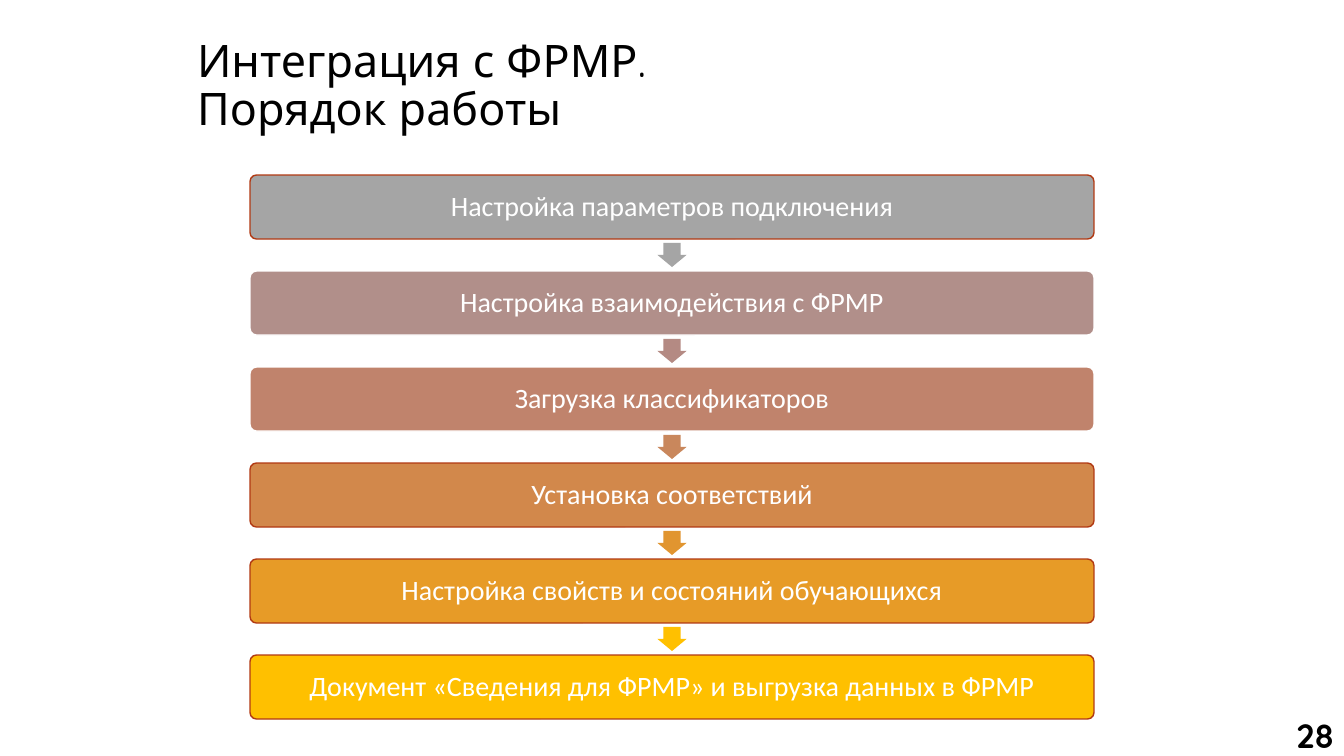
from pptx import Presentation
from pptx.dml.color import RGBColor
from pptx.enum.shapes import MSO_SHAPE as Shape
from pptx.enum.text import MSO_ANCHOR as Anchor, MSO_AUTO_SIZE as AutoSize, PP_ALIGN as Align
from pptx.util import Emu, Pt

EMU_PER_PX = 914400 / 100.8
COLORS = {"black": "000000", "white": "FFFFFF", "rust": "B13913"}
STEPS = [
    ("Настройка параметров подключения", "A5A5A5", "rust"),
    ("Настройка взаимодействия с ФРМР", "B18F8A", "white"),
    ("Загрузка классификаторов", "C0836C", "white"),
    ("Установка соответствий", "D2884B", "rust"),
    ("Настройка свойств и состояний обучающихся", "E79B27", "rust"),
    ("Документ «Сведения для ФРМР» и выгрузка данных в ФРМР", "FFC000", "rust"),
]
ARROW_FILLS = ["A5A5A5", "B48A83", "C9875C", "E19530", "FFC000"]
BOX_LEFT, BOX_TOP, BOX_WIDTH, BOX_HEIGHT, BOX_PITCH = 250, 175, 844, 64, 96
ARROW_LENGTH, ARROW_WIDTH = 24, 29


def px(length):
    return Emu(round(length * EMU_PER_PX))


def color(name):
    return RGBColor.from_string(COLORS.get(name, name))


def write_text(frame, text, size, font="Quicksand", fill="black", bold=False,
               align=Align.LEFT, anchor=Anchor.TOP, spacing=1.0, inset=None):
    frame.word_wrap = True
    frame.vertical_anchor = anchor
    if inset is not None:
        frame.margin_left = frame.margin_right = px(inset)
        frame.margin_top = frame.margin_bottom = px(inset)
    paragraph = frame.paragraphs[0]
    paragraph.text = text
    paragraph.alignment = align
    paragraph.line_spacing = spacing
    for run in paragraph.runs:
        run.font.name = font
        run.font.size = Pt(size)
        run.font.bold = bold
        run.font.color.rgb = color(fill)


class SlideBuilder:
    """Holds the slide and the methods that draw its elements."""

    def __init__(self, presentation):
        self.slide = presentation.slides.add_slide(presentation.slide_layouts[5])

    def title(self, text, left, top, width, height):
        title = self.slide.shapes.title
        title.left, title.top, title.width, title.height = map(px, (left, top, width, height))
        title.text_frame.auto_size = AutoSize.NONE
        write_text(title.text_frame, text, 32, anchor=Anchor.MIDDLE, spacing=0.9)

    def shape(self, kind, left, top, width, height, fill):
        shape = self.slide.shapes.add_shape(kind, *map(px, (left, top, width, height)))
        shape.shadow.inherit = False
        shape.fill.solid()
        shape.fill.fore_color.rgb = color(fill)
        return shape

    def step(self, text, top, fill, line):
        box = self.shape(Shape.ROUNDED_RECTANGLE, BOX_LEFT, top, BOX_WIDTH, BOX_HEIGHT, fill)
        box.adjustments[0] = 0.1
        box.line.color.rgb = color(line)
        box.line.width = Pt(1)
        write_text(box.text_frame, text, 20, font="Calibri", fill="white",
                   align=Align.CENTER, anchor=Anchor.MIDDLE, spacing=0.9, inset=8)

    def arrow(self, center_x, center_y, fill):
        arrow = self.shape(Shape.RIGHT_ARROW, center_x - ARROW_LENGTH / 2,
                           center_y - ARROW_WIDTH / 2, ARROW_LENGTH, ARROW_WIDTH, fill)
        arrow.rotation = 90
        arrow.adjustments[0] = 0.6
        arrow.adjustments[1] = 0.5
        arrow.line.fill.background()

    def page_number(self, text, left, top, width, height):
        box = self.slide.shapes.add_textbox(*map(px, (left, top, width, height)))
        write_text(box.text_frame, text, 24, bold=True, align=Align.RIGHT)


def main():
    presentation = Presentation()
    presentation.slide_width, presentation.slide_height = px(1344), px(756)
    builder = SlideBuilder(presentation)
    builder.title("Интеграция с ФРМР.\vПорядок работы", 187, 1, 834, 172)
    for index, (text, fill, line) in enumerate(STEPS):
        builder.step(text, BOX_TOP + index * BOX_PITCH, fill, line)
    for index, fill in enumerate(ARROW_FILLS):
        gap_middle = BOX_TOP + index * BOX_PITCH + (BOX_HEIGHT + BOX_PITCH) / 2
        builder.arrow(BOX_LEFT + BOX_WIDTH / 2, gap_middle, fill)
    builder.page_number("28", 1238, 710, 106, 51)
    presentation.save("out.pptx")


if __name__ == "__main__":
    main()
